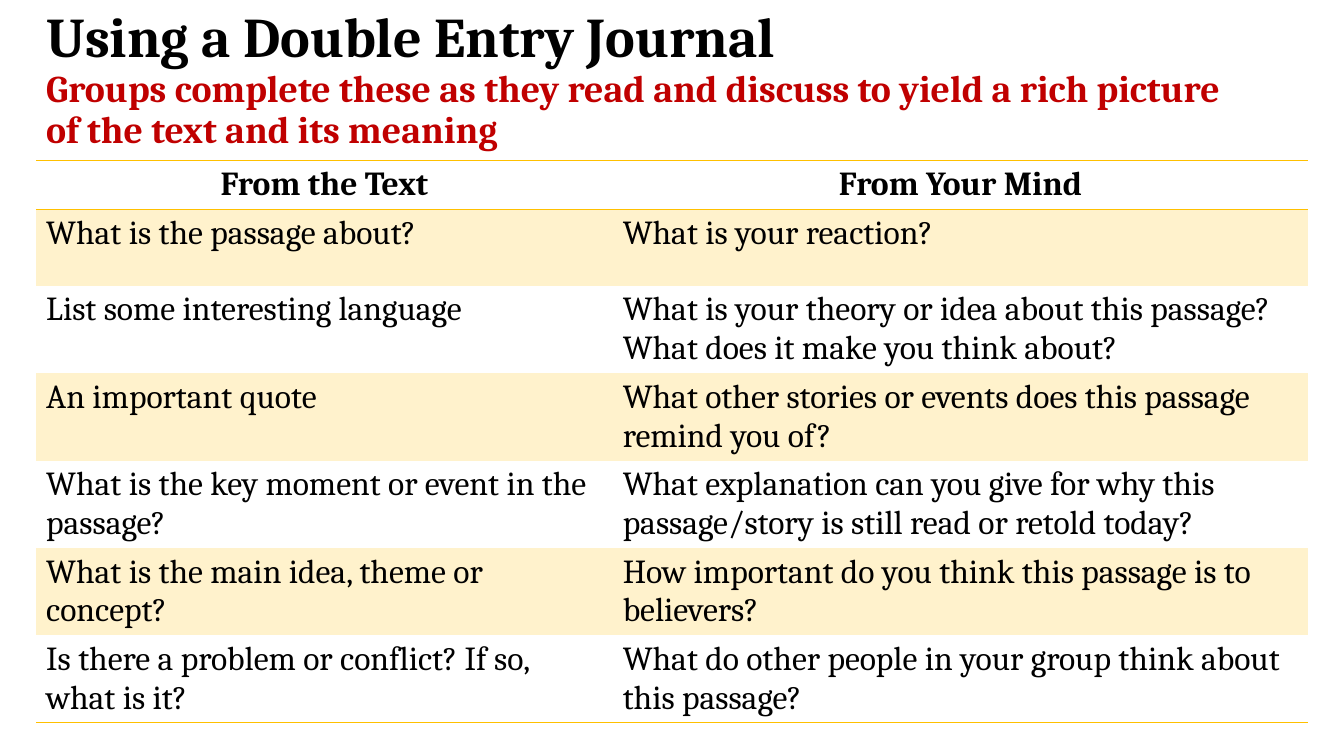
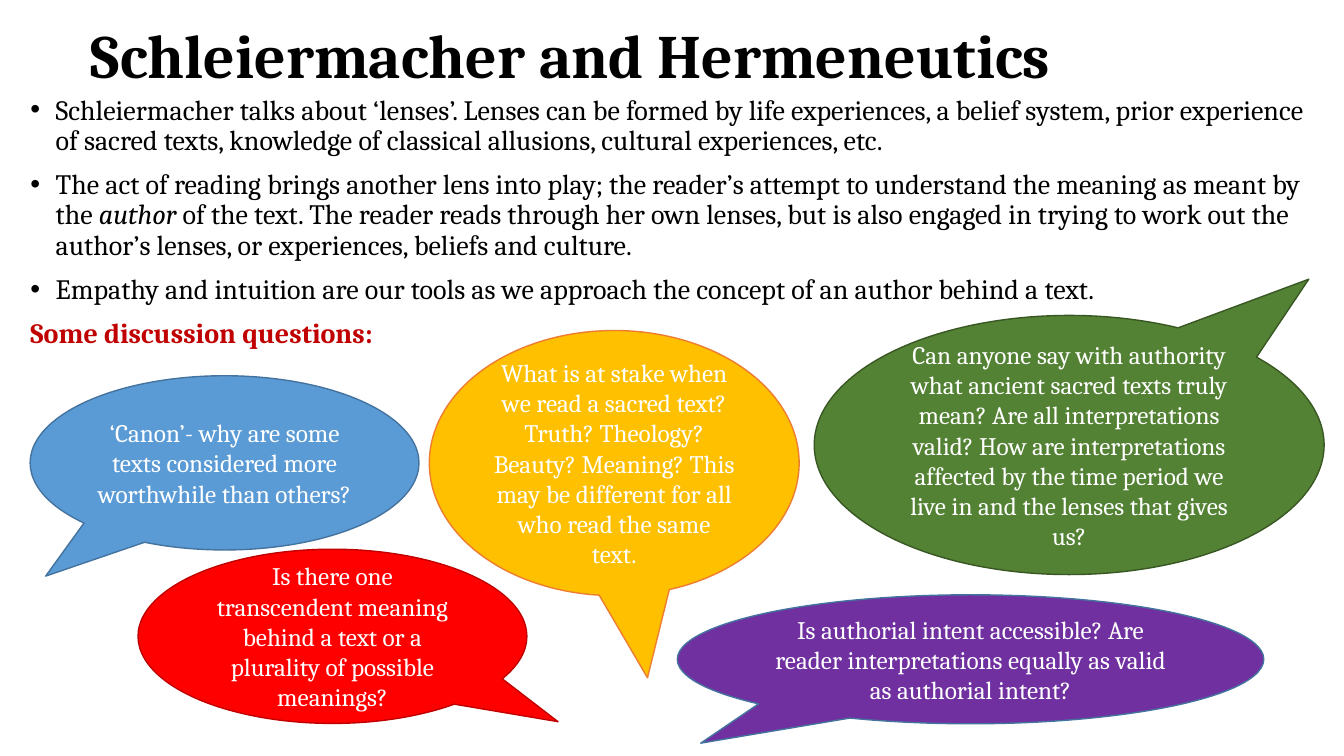
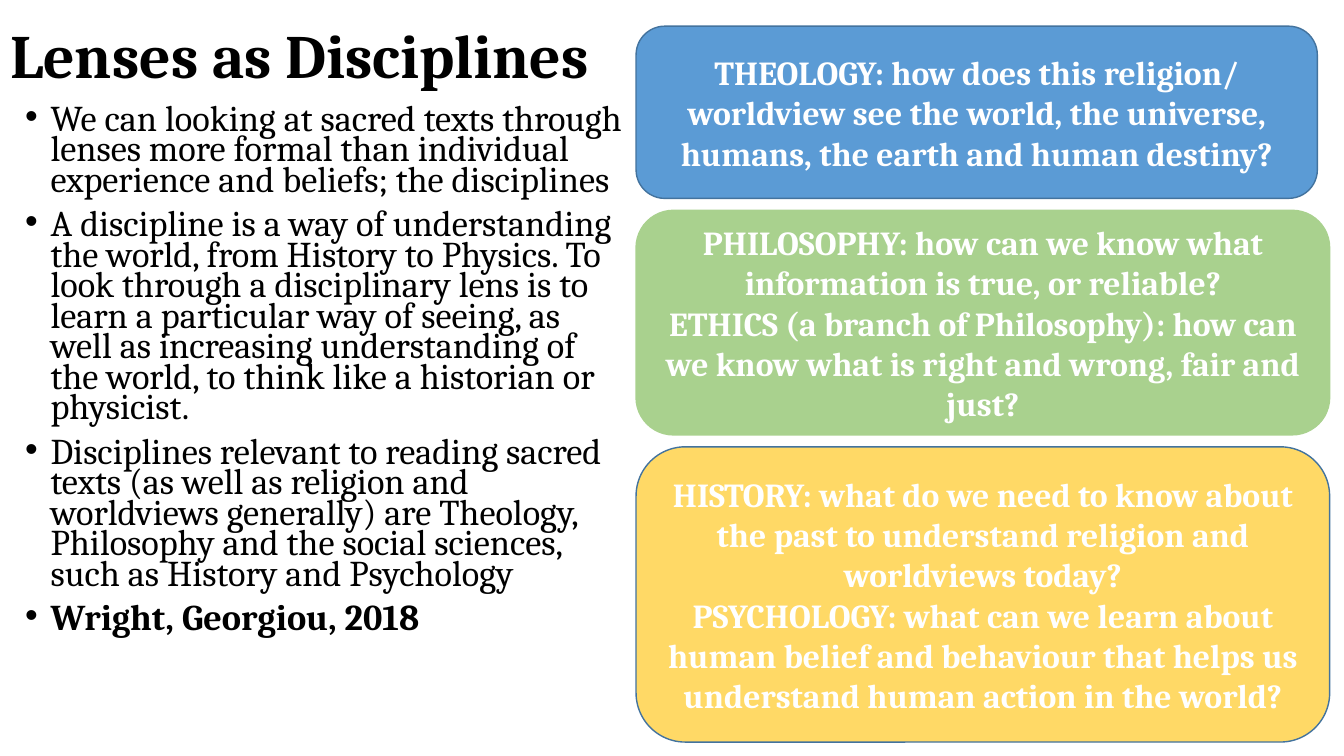
from lxml.etree import SubElement
from pptx import Presentation
from pptx.dml.color import RGBColor
from pptx.enum.shapes import MSO_SHAPE
from pptx.enum.text import MSO_ANCHOR, MSO_AUTO_SIZE, PP_ALIGN
from pptx.oxml.ns import qn
from pptx.util import Cm, Pt

BLACK = RGBColor(0x00, 0x00, 0x00)
WHITE = RGBColor(0xFF, 0xFF, 0xFF)
CRIMSON = RGBColor(0xC0, 0x00, 0x00)
RED = RGBColor(0xFF, 0x00, 0x00)
BLUE = RGBColor(0x5B, 0x9B, 0xD5)
DARK_BLUE = RGBColor(0x43, 0x73, 0x9E)
GREEN = RGBColor(0x54, 0x82, 0x35)
DARK_GREEN = RGBColor(0x38, 0x57, 0x23)
LIGHT_GREEN = RGBColor(0xA9, 0xD1, 0x8E)
GOLD = RGBColor(0xFF, 0xC0, 0x00)
LIGHT_GOLD = RGBColor(0xFF, 0xD9, 0x66)
PALE_GOLD = RGBColor(0xFF, 0xF2, 0xCC)
ORANGE = RGBColor(0xED, 0x7D, 0x31)
PURPLE = RGBColor(0x70, 0x30, 0xA0)

FONT = "Cambria"
TITLE_AND_BODY, TITLE_ONLY = 1, 5
PLAIN_TABLE_STYLE = "{2D5ABB26-0587-4C30-8999-92F81FD0307C}"


class Deck:
    def __init__(self):
        self.prs = Presentation()
        self.prs.slide_width = Cm(33.87)
        self.prs.slide_height = Cm(19.05)
        self.slide = None

    def add_slide(self, layout):
        self.slide = self.prs.slides.add_slide(self.prs.slide_layouts[layout])
        for ph in list(self.slide.placeholders):
            if ph.placeholder_format.idx >= 10:
                ph._element.getparent().remove(ph._element)

    def run(self, p, text, size, color=BLACK, bold=False, italic=False):
        r = p.add_run()
        r.text = text
        font = r.font
        font.name, font.size = FONT, Pt(size)
        font.bold, font.italic = bold, italic
        font.color.rgb = color

    def place(self, sp, box, anchor):
        """Move a placeholder to box and return its text frame."""
        sp.left, sp.top, sp.width, sp.height = (Cm(v) for v in box)
        tf = sp.text_frame
        tf.auto_size = MSO_AUTO_SIZE.NONE
        tf.word_wrap = True
        tf.vertical_anchor = anchor
        return tf

    def title(self, box, text, size=44, subtitle=None):
        tf = self.place(self.slide.shapes.title, box, MSO_ANCHOR.MIDDLE)
        p = tf.paragraphs[0]
        p.alignment, p.line_spacing = PP_ALIGN.LEFT, 0.9
        self.run(p, text, size, bold=True)
        if subtitle:
            p.add_line_break()
            self.run(p, subtitle, 27, CRIMSON, bold=True)

    def body(self, box, items, size, spacing):
        """Each item is (bulleted, runs); a run is (text, font options)."""
        tf = self.place(self.slide.placeholders[1], box, MSO_ANCHOR.TOP)
        for i, (bulleted, runs) in enumerate(items):
            p = tf.add_paragraph() if i else tf.paragraphs[0]
            p.line_spacing = spacing
            p.space_before, p.space_after = Pt(10), Pt(0)
            self.bullet(p, bulleted)
            for text, options in runs:
                self.run(p, text, size, **options)

    def bullet(self, p, bulleted):
        pPr = p._p.get_or_add_pPr()
        indent = Cm(0.64) if bulleted else 0
        pPr.set("marL", str(indent))
        pPr.set("indent", str(-indent))
        if bulleted:
            SubElement(pPr, qn("a:buFont"), typeface="Arial")
            SubElement(pPr, qn("a:buChar"), char="•")
        else:
            SubElement(pPr, qn("a:buNone"))

    def shape(self, kind, box, fill, line, paragraphs, size, bold=False):
        sp = self.slide.shapes.add_shape(kind, *(Cm(v) for v in box))
        sp.shadow.inherit = False
        sp.fill.solid()
        sp.fill.fore_color.rgb = fill
        sp.line.color.rgb = line
        sp.line.width = Pt(1)
        tf = sp.text_frame
        tf.word_wrap = True
        tf.vertical_anchor = MSO_ANCHOR.MIDDLE
        for i, text in enumerate(paragraphs):
            p = tf.add_paragraph() if i else tf.paragraphs[0]
            p.alignment = PP_ALIGN.CENTER
            self.run(p, text, size, WHITE, bold)
        return sp

    def callout(self, box, tail, fill, line, text):
        sp = self.shape(MSO_SHAPE.OVAL_CALLOUT, box, fill, line, [text], 18)
        sp.adjustments[0], sp.adjustments[1] = tail

    def card(self, box, fill, line, paragraphs):
        self.shape(MSO_SHAPE.ROUNDED_RECTANGLE, box, fill, line, paragraphs, 24, bold=True)

    def border(self, cell, sides):
        tcPr = cell._tc.get_or_add_tcPr()
        for i, side in enumerate(sides):
            ln = tcPr.makeelement(qn(f"a:ln{side}"), {"w": str(Pt(1))})
            fill = SubElement(ln, qn("a:solidFill"))
            SubElement(fill, qn("a:srgbClr"), val=str(GOLD))
            tcPr.insert(i, ln)

    def table(self, left, top, col_widths, header_height, row_height, rows):
        heights = [header_height] + [row_height] * (len(rows) - 1)
        frame = self.slide.shapes.add_table(
            len(rows), len(col_widths), Cm(left), Cm(top),
            Cm(sum(col_widths)), Cm(sum(heights)))
        table = frame.table
        table._tbl.tblPr.find(qn("a:tableStyleId")).text = PLAIN_TABLE_STYLE
        for col, width in zip(table.columns, col_widths):
            col.width = Cm(width)
        for i, (texts, height) in enumerate(zip(rows, heights)):
            table.rows[i].height = Cm(height)
            header = i == 0
            for j, text in enumerate(texts):
                cell = table.cell(i, j)
                if i % 2:
                    cell.fill.solid()
                    cell.fill.fore_color.rgb = PALE_GOLD
                else:
                    cell.fill.background()
                p = cell.text_frame.paragraphs[0]
                p.alignment = PP_ALIGN.CENTER if header else PP_ALIGN.LEFT
                self.run(p, text, 24, bold=header)
                if header:
                    self.border(cell, "TB")
                elif i == len(rows) - 1:
                    self.border(cell, "B")


def journal_slide(deck):
    deck.add_slide(TITLE_ONLY)
    deck.title((0.91, 0, 30.61, 4.04), "Using a Double Entry Journal", 40,
               "Groups complete these as they read and discuss to yield a rich "
               "picture of the text and its meaning")
    deck.table(0.91, 4.04, (14.53, 17.53), 0.91, 1.93, [
        ("From the Text", "From Your Mind"),
        ("What is the passage about?", "What is your reaction?"),
        ("List some interesting language",
         "What is your theory or idea about this passage? What does it make you think about?"),
        ("An important quote",
         "What other stories or events does this passage remind you of?"),
        ("What is the key moment or event in the passage?",
         "What explanation can you give for why this passage/story is still read or retold today?"),
        ("What is the main idea, theme or concept?",
         "How important do you think this passage is to believers?"),
        ("Is there a problem or conflict? If so, what is it?",
         "What do other people in your group think about this passage?"),
    ])


def hermeneutics_slide(deck):
    deck.add_slide(TITLE_AND_BODY)
    deck.title((2.03, -0.36, 29.21, 3.68), "Schleiermacher and Hermeneutics")
    deck.body((0.51, 2.29, 32.87, 7.19), [
        (True, [("Schleiermacher talks about ‘lenses’. Lenses can be formed by life "
                 "experiences, a belief system, prior experience of sacred texts, knowledge "
                 "of classical allusions, cultural experiences, etc.", {})]),
        (True, [("The act of reading brings another lens into play; the reader’s attempt "
                 "to understand the meaning as meant by the ", {}),
                ("author", {"italic": True}),
                (" of the text. The reader reads through her own lenses, but is also engaged "
                 "in trying to work out the author’s lenses, or experiences, beliefs and "
                 "culture.", {})]),
        (True, [("Empathy and intuition are our tools as we approach the concept of an "
                 "author behind a text.", {})]),
        (False, [("Some discussion questions:", {"color": CRIMSON, "bold": True})]),
    ], 20, 0.9)
    lower_left = (-0.46, 0.65)
    for callout in (
        ((0.76, 9.47, 9.8, 4.39), lower_left, BLUE, DARK_BLUE,
         "‘Canon’- why are some texts considered more worthwhile than others?"),
        ((20.52, 7.95, 12.85, 6.53), (0.47, -0.64), GREEN, DARK_GREEN,
         "Can anyone say with authority what ancient sacred texts truly mean? Are all "
         "interpretations valid? How are interpretations affected by the time period we "
         "live in and the lenses that gives us?"),
        ((10.82, 8.33, 9.32, 6.68), (0.09, 0.81), GOLD, ORANGE,
         "What is at stake when we read a sacred text? Truth? Theology? Beauty? Meaning? "
         "This may be different for all who read the same text."),
        ((3.48, 13.84, 9.8, 4.39), (0.58, 0.49), RED, CRIMSON,
         "Is there one transcendent meaning behind a text or a plurality of possible meanings?"),
        ((17.07, 14.99, 14.78, 3.25), lower_left, PURPLE, DARK_BLUE,
         "Is authorial intent accessible? Are reader interpretations equally as valid as "
         "authorial intent?"),
    ):
        deck.callout(*callout)


def disciplines_slide(deck):
    deck.add_slide(TITLE_AND_BODY)
    deck.title((0, 0.15, 18.69, 2.67), "Lenses as Disciplines")
    deck.body((0.38, 2.57, 15.65, 15.44), [
        (True, [("We can looking at sacred texts through lenses more formal than individual "
                 "experience and beliefs; the disciplines", {})]),
        (True, [("A discipline is a way of understanding the world, from History to Physics. "
                 "To look through a disciplinary lens is to learn a particular way of seeing, "
                 "as well as increasing understanding of the world, to think like a historian "
                 "or physicist.", {})]),
        (True, [("Disciplines relevant to reading sacred texts (as well as religion and "
                 "worldviews generally) are Theology, Philosophy and the social sciences, "
                 "such as History and Psychology", {})]),
        (True, [("Wright, Georgiou, 2018", {"bold": True})]),
    ], 25.9, 0.7)
    top, gap = 0.66, 0.3
    for width, height, fill, line, paragraphs in (
        (17.17, 4.34, BLUE, DARK_BLUE,
         ["THEOLOGY: how does this religion/ worldview see the world, the universe, humans, "
          "the earth and human destiny?"]),
        (17.48, 5.66, LIGHT_GREEN, LIGHT_GREEN,
         ["PHILOSOPHY: how can we know what information is true, or reliable?",
          "ETHICS (a branch of Philosophy): how can we know what is right and wrong, fair "
          "and just?"]),
        (17.48, 7.44, LIGHT_GOLD, DARK_BLUE,
         ["HISTORY: what do we need to know about the past to understand religion and "
          "worldviews today?",
          "PSYCHOLOGY: what can we learn about human belief and behaviour that helps us "
          "understand human action in the world?"]),
    ):
        deck.card((16.03, top, width, height), fill, line, paragraphs)
        top += height + gap


def main():
    deck = Deck()
    journal_slide(deck)
    hermeneutics_slide(deck)
    disciplines_slide(deck)
    deck.prs.save("out.pptx")


if __name__ == "__main__":
    main()
